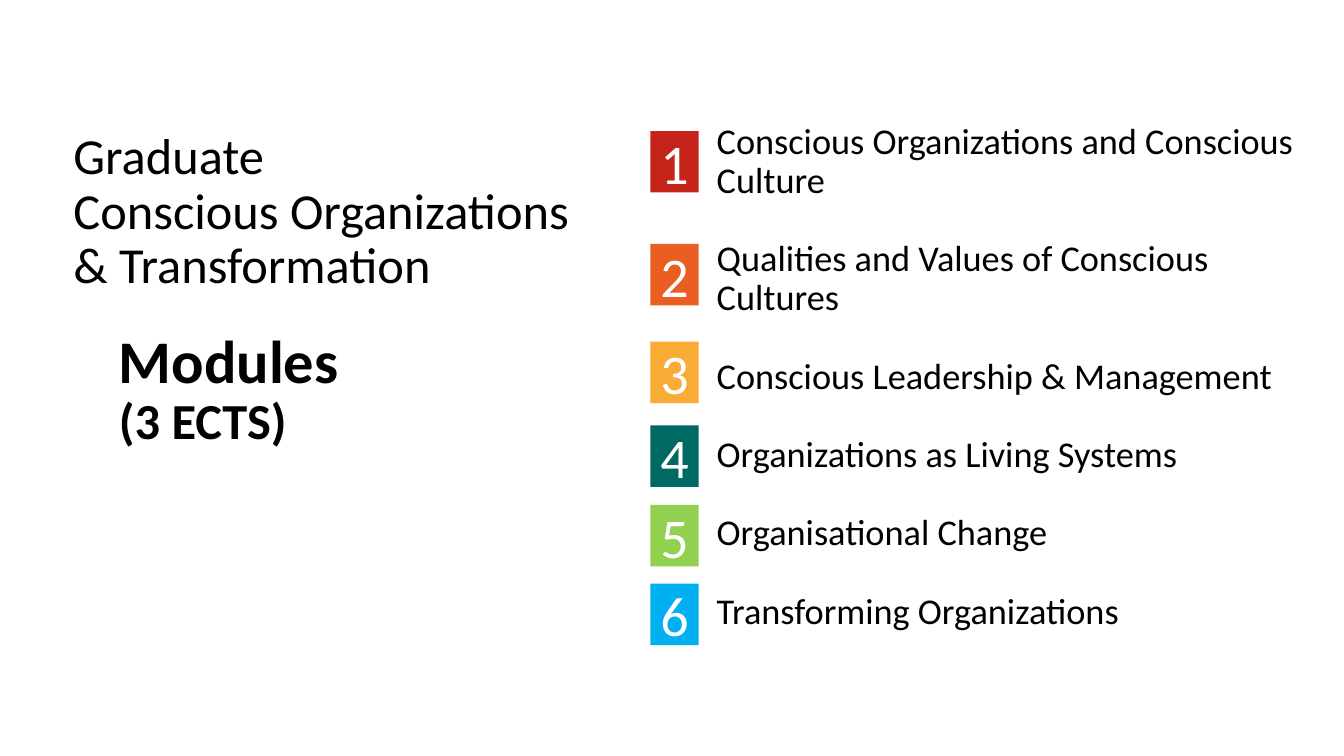
from pptx import Presentation
from pptx.dml.color import RGBColor
from pptx.enum.shapes import MSO_SHAPE
from pptx.enum.text import MSO_ANCHOR, PP_ALIGN
from pptx.util import Inches, Pt

RECTANGLE = MSO_SHAPE.RECTANGLE
BOTTOM, MIDDLE = MSO_ANCHOR.BOTTOM, MSO_ANCHOR.MIDDLE
LEFT, CENTER = PP_ALIGN.LEFT, PP_ALIGN.CENTER
TITLE_ONLY = 5

BLACK = RGBColor(0x00, 0x00, 0x00)
WHITE = RGBColor(0xFF, 0xFF, 0xFF)
RED = RGBColor(0xC5, 0x24, 0x1B)
ORANGE = RGBColor(0xEA, 0x5E, 0x22)
AMBER = RGBColor(0xF8, 0xAC, 0x36)
TEAL = RGBColor(0x00, 0x69, 0x64)
GREEN = RGBColor(0x92, 0xD0, 0x50)
BLUE = RGBColor(0x00, 0xB0, 0xF0)

# Module name, top of its number tile in inches, tile colour
MODULES = [
    ("Conscious Organizations and Conscious Culture", 1.3, RED),
    ("Qualities and Values of Conscious Cultures", 2.42, ORANGE),
    ("Conscious Leadership & Management", 3.39, AMBER),
    ("Organizations as Living Systems", 4.22, TEAL),
    ("Organisational Change", 5.01, GREEN),
    ("Transforming Organizations", 5.79, BLUE),
]


class ModuleSlide:
    font_name = "Calibri"
    line_spacing = 0.9

    def __init__(self, presentation):
        self.slide = presentation.slides.add_slide(presentation.slide_layouts[TITLE_ONLY])

    def style(self, paragraph, size, color=BLACK, align=LEFT):
        paragraph.alignment = align
        paragraph.font.name = self.font_name
        paragraph.font.size = Pt(size)
        paragraph.font.color.rgb = color

    def title(self, heading, detail, left, top, width, height):
        shape = self.slide.shapes.title
        shape.left, shape.top = Inches(left), Inches(top)
        shape.width, shape.height = Inches(width), Inches(height)
        frame = shape.text_frame
        frame.word_wrap = True
        frame.vertical_anchor = BOTTOM
        paragraph = frame.paragraphs[0]
        paragraph.add_run().text = heading
        paragraph.add_line_break()
        detail_run = paragraph.add_run()
        detail_run.text = detail
        detail_run.font.size = Pt(36)
        self.style(paragraph, 43.2)
        paragraph.font.bold = True
        paragraph.line_spacing = self.line_spacing

    def text(self, lines, left, top, width, height, size, anchor, before=0, after=0):
        box = self.slide.shapes.add_textbox(
            Inches(left), Inches(top), Inches(width), Inches(height))
        frame = box.text_frame
        frame.word_wrap = True
        frame.vertical_anchor = anchor
        for index, line in enumerate(lines):
            paragraph = frame.add_paragraph() if index else frame.paragraphs[0]
            paragraph.text = line
            paragraph.line_spacing = self.line_spacing
            paragraph.space_before = Pt(before if index else 0)
            paragraph.space_after = Pt(after)
            self.style(paragraph, size)

    def number_tile(self, number, top, color):
        shape = self.slide.shapes.add_shape(
            RECTANGLE, Inches(6.45), Inches(top), Inches(0.48), Inches(0.61))
        shape.shadow.inherit = False
        shape.fill.solid()
        shape.fill.fore_color.rgb = color
        shape.line.fill.background()
        frame = shape.text_frame
        frame.margin_left = frame.margin_right = 0
        frame.vertical_anchor = MIDDLE
        paragraph = frame.paragraphs[0]
        paragraph.text = str(number)
        self.style(paragraph, 40, WHITE, CENTER)


def main():
    presentation = Presentation()
    presentation.slide_width, presentation.slide_height = Inches(13.33), Inches(7.5)
    page = ModuleSlide(presentation)

    # Programme name and title
    page.text(["Graduate\vConscious Organizations & Transformation"],
              0.63, 1.02, 5.21, 1.95, 36, BOTTOM)
    page.title("Modules", "(3 ECTS)", 1.08, 3.22, 4.3, 1.3)

    # Module list
    page.text([name for name, _, _ in MODULES],
              7.01, 1.08, 6.12, 5.33, 25.9, MIDDLE, before=10, after=18)

    # Number tiles
    for number, (_, top, color) in enumerate(MODULES, start=1):
        page.number_tile(number, top, color)

    presentation.save("out.pptx")


if __name__ == "__main__":
    main()
